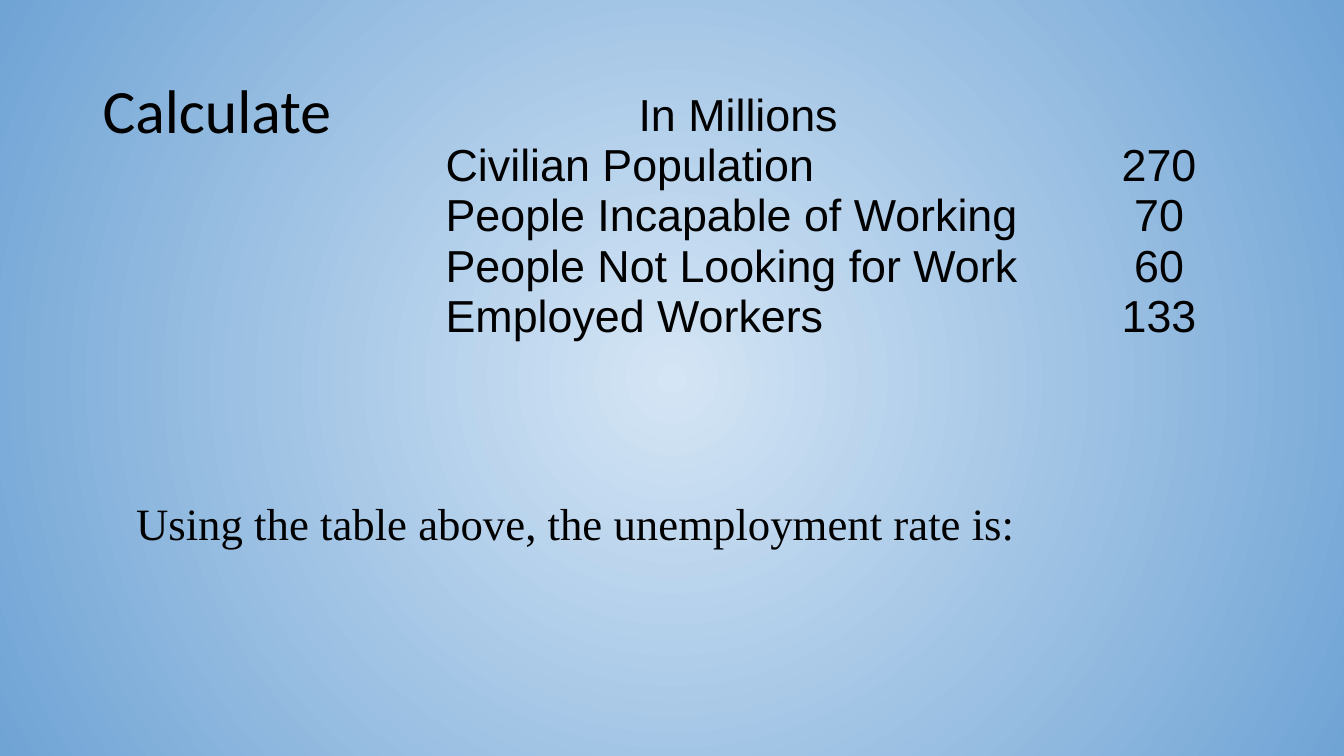
import dataclasses

import pptx
import pptx.dml.color
import pptx.enum.text
import pptx.oxml
import pptx.oxml.ns
import pptx.util

Cm = pptx.util.Cm
Pt = pptx.util.Pt
ALIGN = pptx.enum.text.PP_ALIGN
ANCHOR = pptx.enum.text.MSO_ANCHOR
PLAIN_TABLE_STYLE = "{2D5ABB26-0587-4C30-8999-92F81FD0307C}"


@dataclasses.dataclass(frozen=True)
class Theme:
    centre: str = "D4E5F5"
    edge: str = "70A4D5"
    ink: str = "000000"
    title_size: int = 44
    text_size: int = 32
    title_font: str = "Calibri"
    table_font: str = "Arial"
    question_font: str = "Times New Roman"


THEME = Theme()

POPULATION = [
    ("In Millions", ""),
    ("Civilian Population", "270"),
    ("People Incapable of Working", "70"),
    ("People Not Looking for Work", "60"),
    ("Employed Workers", "133"),
]


def colour(value):
    return pptx.dml.color.RGBColor.from_string(value)


def write(frame, text, font, size, align=ALIGN.LEFT):
    """Put one formatted paragraph into a text frame."""
    para = frame.paragraphs[0]
    para.text = text
    para.alignment = align
    para.font.name = font
    para.font.size = Pt(size)
    para.font.color.rgb = colour(THEME.ink)
    return para


def paint_background(page):
    fill = page.background.fill
    fill.gradient()
    for stop, value in zip(fill.gradient_stops, (THEME.centre, THEME.edge)):
        stop.color.rgb = colour(value)
    # Radial instead of linear
    gradient = page.background._cSld.find(".//" + pptx.oxml.ns.qn("a:gradFill"))
    linear = gradient.find(pptx.oxml.ns.qn("a:lin"))
    circle = pptx.oxml.parse_xml(
        f'<a:path {pptx.oxml.ns.nsdecls("a")} path="circle">'
        '<a:fillToRect l="50000" t="50000" r="50000" b="50000"/></a:path>'
    )
    gradient.replace(linear, circle)


def add_title(page, text):
    title = page.shapes.title
    title.left, title.top = Cm(2.33), Cm(1.01)
    title.width, title.height = Cm(29.21), Cm(3.68)
    title.text_frame.vertical_anchor = ANCHOR.MIDDLE
    para = write(title.text_frame, text, THEME.title_font, THEME.title_size)
    para.line_spacing = 0.9


def add_population_table(page, rows):
    widths = (Cm(15.11), Cm(6.1))
    row_height = Cm(1.27)
    table = page.shapes.add_table(
        len(rows), len(widths), Cm(11.05), Cm(1.01),
        sum(widths), row_height * (len(rows) + 1),
    ).table
    table.first_row = table.horz_banding = False
    table._tbl.tblPr.find(pptx.oxml.ns.qn("a:tableStyleId")).text = PLAIN_TABLE_STYLE
    for column, width in zip(table.columns, widths):
        column.width = width
    for index, values in enumerate(rows):
        # The heading row is twice as tall, with its text at the bottom
        table.rows[index].height = row_height * (2 if index == 0 else 1)
        for position, value in enumerate(values):
            cell = table.cell(index, position)
            cell.fill.background()
            cell.margin_left = cell.margin_right = Cm(0.18)
            cell.margin_top = cell.margin_bottom = 0
            cell.vertical_anchor = ANCHOR.BOTTOM if index == 0 else ANCHOR.TOP
            centred = index == 0 or position == 1
            write(cell.text_frame, value, THEME.table_font, THEME.text_size,
                  ALIGN.CENTER if centred else ALIGN.LEFT)


def add_question(page, text):
    box = page.shapes.add_textbox(Cm(3.02), Cm(12.37), Cm(23.04), Cm(1.63))
    box.text_frame.word_wrap = True
    box.text_frame.margin_left = Cm(0.41)
    write(box.text_frame, text, THEME.question_font, THEME.text_size)


def main():
    deck = pptx.Presentation()
    deck.slide_width, deck.slide_height = Cm(33.87), Cm(19.05)
    page = deck.slides.add_slide(deck.slide_layouts[5])

    paint_background(page)
    add_title(page, "Calculate")
    add_population_table(page, POPULATION)
    add_question(page, "Using the table above, the unemployment rate is:")

    deck.save("out.pptx")


if __name__ == "__main__":
    main()
